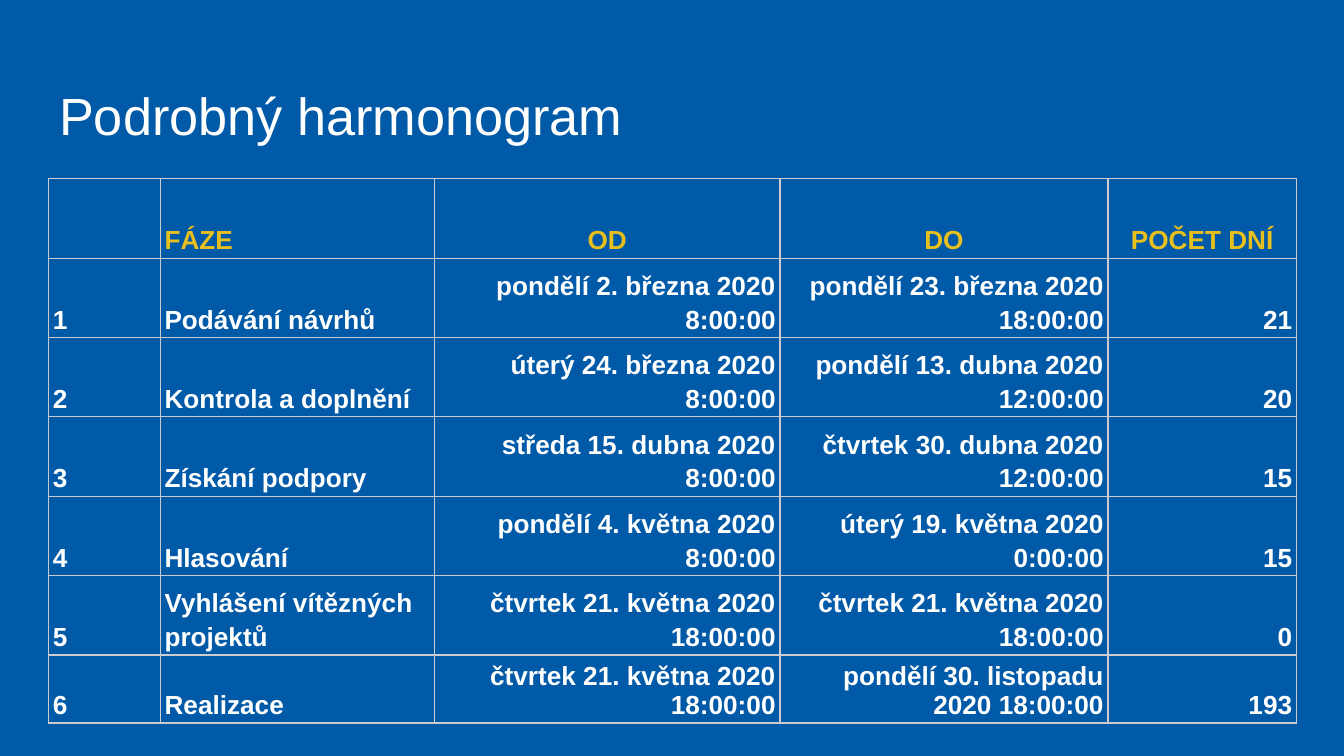
from lxml.etree import SubElement
from pptx import Presentation
from pptx.dml.color import RGBColor
from pptx.enum.text import MSO_ANCHOR, PP_ALIGN
from pptx.oxml.ns import qn
from pptx.util import Cm, Pt

COLORS = {"blue": "005AA7", "white": "FFFFFF", "gold": "E9BF1E", "border": "CCCCCC"}


def format_font(paragraph, size, color, bold=False):
    for run in paragraph.runs:
        run.font.name = "Arial"
        run.font.size = Pt(size)
        run.font.bold = bold
        run.font.color.rgb = RGBColor.from_string(COLORS[color])


def add_borders(cell):
    properties = cell._tc.get_or_add_tcPr()
    for side in ("lnL", "lnR", "lnT", "lnB"):
        line = SubElement(properties, qn(f"a:{side}"), w=str(Pt(0.75)))
        fill = SubElement(line, qn("a:solidFill"))
        SubElement(fill, qn("a:srgbClr"), val=COLORS["border"])


presentation = Presentation()
presentation.slide_width = Cm(25.4)
presentation.slide_height = Cm(14.29)
slide = presentation.slides.add_slide(presentation.slide_layouts[6])
slide.background.fill.solid()
slide.background.fill.fore_color.rgb = RGBColor.from_string(COLORS["blue"])

# Title
title = slide.shapes.add_textbox(Cm(0.87), Cm(1.24), Cm(23.67), Cm(1.6))
text_frame = title.text_frame
text_frame.word_wrap = True
text_frame.margin_top = Cm(0.34)
text_frame.text = "Podrobný harmonogram"
format_font(text_frame.paragraphs[0], 28, "white")

# Schedule data
rows = [
    ("", "FÁZE", "OD", "DO", "POČET DNÍ"),
    ("1", "Podávání návrhů", "pondělí 2. března 2020 8:00:00",
     "pondělí 23. března 2020 18:00:00", "21"),
    ("2", "Kontrola a doplnění", "úterý 24. března 2020 8:00:00",
     "pondělí 13. dubna 2020 12:00:00", "20"),
    ("3", "Získání podpory", "středa 15. dubna 2020 8:00:00",
     "čtvrtek 30. dubna 2020 12:00:00", "15"),
    ("4", "Hlasování", "pondělí 4. května 2020 8:00:00",
     "úterý 19. května 2020 0:00:00", "15"),
    ("5", "Vyhlášení vítězných projektů", "čtvrtek 21. května 2020 18:00:00",
     "čtvrtek 21. května 2020 18:00:00", "0"),
    ("6", "Realizace", "čtvrtek 21. května 2020 18:00:00",
     "pondělí 30. listopadu 2020 18:00:00", "193"),
]
column_widths = [2.11, 5.18, 6.53, 6.2, 3.56]
row_heights = [1.5] * 6 + [0.81]
last_row = len(rows) - 1

# Schedule table
table = slide.shapes.add_table(
    len(rows), len(column_widths), Cm(0.92), Cm(3.38),
    Cm(sum(column_widths)), Cm(sum(row_heights))).table
for column, width in zip(table.columns, column_widths):
    column.width = Cm(width)
for row, height in zip(table.rows, row_heights):
    row.height = Cm(height)

for row_index, values in enumerate(rows):
    is_header = row_index == 0
    for column_index, value in enumerate(values):
        cell = table.cell(row_index, column_index)
        add_borders(cell)
        cell.fill.solid()
        cell.fill.fore_color.rgb = RGBColor.from_string(COLORS["blue"])
        cell.vertical_anchor = MSO_ANCHOR.BOTTOM
        cell.margin_left = cell.margin_right = Cm(0.08)
        cell.margin_top = cell.margin_bottom = Cm(0.05)
        if not value:
            continue
        cell.text_frame.text = value
        paragraph = cell.text_frame.paragraphs[0]
        if column_index >= 2:
            paragraph.alignment = PP_ALIGN.CENTER if is_header else PP_ALIGN.RIGHT
        # The dates in the short last row are set tighter
        if row_index < last_row or column_index not in (2, 3):
            paragraph.line_spacing = 1.15
        format_font(paragraph, 14, "gold" if is_header else "white", bold=True)

presentation.save("out.pptx")
